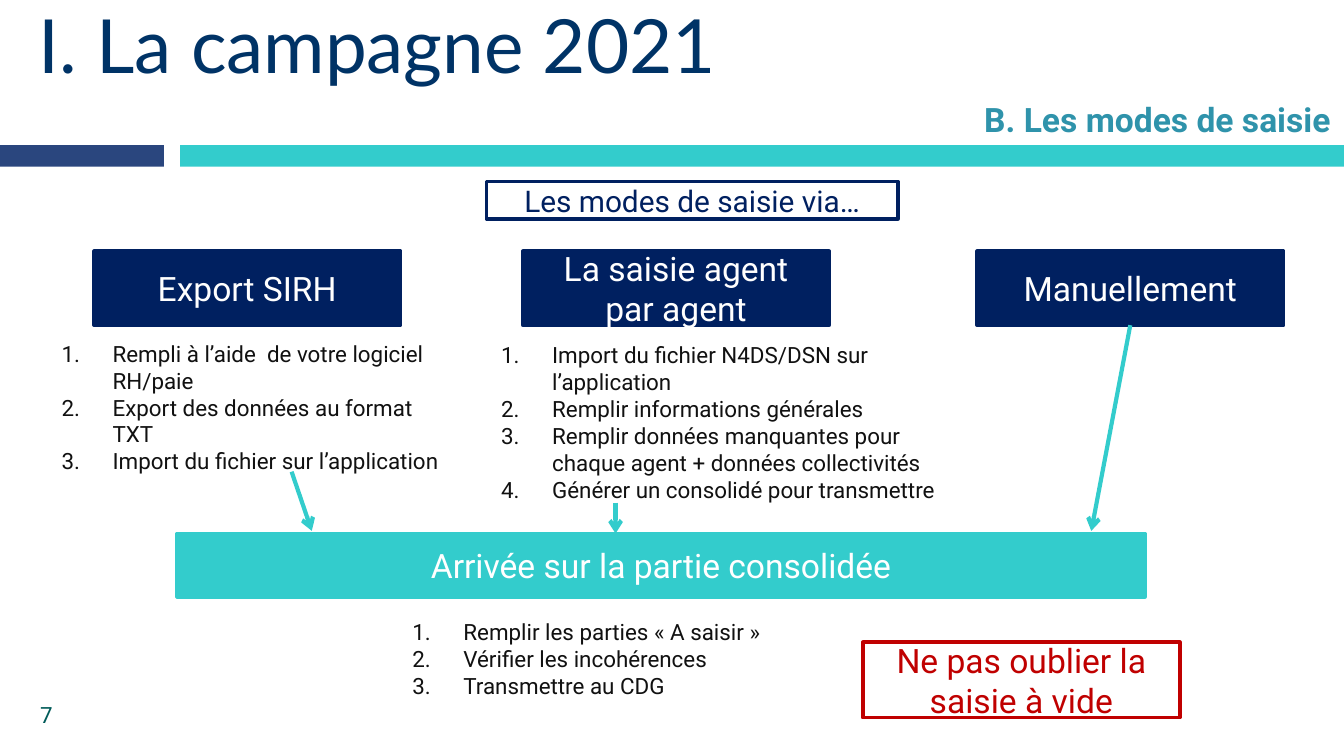
from dataclasses import dataclass
from typing import Optional

from lxml import etree
from pptx import Presentation
from pptx.dml.color import RGBColor
from pptx.enum.shapes import MSO_CONNECTOR, MSO_SHAPE
from pptx.enum.text import MSO_ANCHOR, MSO_AUTO_SIZE, PP_ALIGN
from pptx.oxml.ns import qn
from pptx.shapes.autoshape import Shape
from pptx.slide import Slide
from pptx.util import Inches, Pt

RECTANGLE = MSO_SHAPE.RECTANGLE
STRAIGHT = MSO_CONNECTOR.STRAIGHT
MIDDLE, TOP = MSO_ANCHOR.MIDDLE, MSO_ANCHOR.TOP
LEFT, CENTER, RIGHT = PP_ALIGN.LEFT, PP_ALIGN.CENTER, PP_ALIGN.RIGHT
NO_AUTOFIT, GROW = MSO_AUTO_SIZE.NONE, MSO_AUTO_SIZE.SHAPE_TO_FIT_TEXT
BOTTOM_SIDE = 2


@dataclass(frozen=True)
class Theme:
    title_font: str = "Lato"
    body_font: str = "Roboto"
    navy: str = "002060"
    turquoise: str = "33CCCC"
    bar_blue: str = "2A467E"
    title_blue: str = "003366"
    subtitle_blue: str = "2F93AB"
    page_green: str = "005B59"
    red: str = "C00000"
    ink: str = "111111"
    white: str = "FFFFFF"
    title_size: int = 40
    box_size: int = 18
    heading_size: int = 16
    list_size: int = 12
    outline: float = 2
    arrow: float = 2.25


THEME = Theme()


@dataclass(frozen=True)
class Area:
    left: float
    top: float
    width: float
    height: float

    def lengths(self) -> list[int]:
        return [Inches(value) for value in (self.left, self.top, self.width, self.height)]


@dataclass(frozen=True)
class Box:
    area: Area
    text: str
    fill: Optional[str]
    outline: str
    color: str = THEME.white
    size: int = THEME.box_size


@dataclass(frozen=True)
class NumberedList:
    area: Area
    steps: tuple[str, ...]


@dataclass(frozen=True)
class Arrow:
    start: tuple[float, float]
    end: tuple[float, float]
    source: Optional[Shape] = None


def rgb(color: str) -> RGBColor:
    return RGBColor.from_string(color)


def add_run(paragraph, text: str, size: int, color: str,
            font_name: str = THEME.body_font, bold: bool = False) -> None:
    run = paragraph.add_run()
    run.text = text
    run.font.name = font_name
    run.font.size = Pt(size)
    run.font.bold = bold
    run.font.color.rgb = rgb(color)


def add_bar(slide: Slide, area: Area, color: str) -> None:
    bar = slide.shapes.add_shape(RECTANGLE, *area.lengths())
    bar.shadow.inherit = False
    bar.fill.solid()
    bar.fill.fore_color.rgb = rgb(color)
    bar.line.fill.background()


def add_box(slide: Slide, box: Box) -> Shape:
    shape = slide.shapes.add_shape(RECTANGLE, *box.area.lengths())
    shape.shadow.inherit = False
    if box.fill:
        shape.fill.solid()
        shape.fill.fore_color.rgb = rgb(box.fill)
    else:
        shape.fill.background()
    shape.line.color.rgb = rgb(box.outline)
    shape.line.width = Pt(THEME.outline)
    frame = shape.text_frame
    frame.word_wrap = True
    frame.vertical_anchor = MIDDLE
    paragraph = frame.paragraphs[0]
    paragraph.alignment = CENTER
    add_run(paragraph, box.text, box.size, box.color)
    return shape


def add_text_frame(slide: Slide, area: Area, anchor: MSO_ANCHOR = TOP,
                   auto_size: MSO_AUTO_SIZE = GROW):
    frame = slide.shapes.add_textbox(*area.lengths()).text_frame
    frame.word_wrap = True
    frame.vertical_anchor = anchor
    frame.auto_size = auto_size
    return frame


def set_left_margin(paragraph, margin: float, indent: float = 0) -> None:
    properties = paragraph._p.get_or_add_pPr()
    properties.set("marL", str(Inches(margin)))
    properties.set("indent", str(Inches(indent)))


def add_numbered_list(slide: Slide, numbered_list: NumberedList) -> None:
    frame = add_text_frame(slide, numbered_list.area)
    for index, step in enumerate(numbered_list.steps):
        paragraph = frame.add_paragraph() if index else frame.paragraphs[0]
        set_left_margin(paragraph, 0.38, -0.38)
        properties = paragraph._p.get_or_add_pPr()
        etree.SubElement(properties, qn("a:buFont"), typeface="+mj-lt")
        etree.SubElement(properties, qn("a:buAutoNum"), type="arabicPeriod")
        add_run(paragraph, step, THEME.list_size, THEME.ink)


def add_arrow(slide: Slide, arrow: Arrow) -> None:
    points = [Inches(value) for value in arrow.start + arrow.end]
    connector = slide.shapes.add_connector(STRAIGHT, *points)
    if arrow.source is not None:
        connector.begin_connect(arrow.source, BOTTOM_SIDE)
    connector.line.color.rgb = rgb(THEME.turquoise)
    connector.line.width = Pt(THEME.arrow)
    etree.SubElement(connector.line._get_or_add_ln(), qn("a:tailEnd"), type="arrow")
    etree.SubElement(connector._element.spPr, qn("a:effectLst"))


def add_title(slide: Slide, area: Area, text: str) -> None:
    title = slide.shapes.title
    title.left, title.top, title.width, title.height = area.lengths()
    frame = title.text_frame
    frame.auto_size = NO_AUTOFIT
    frame.vertical_anchor = MIDDLE
    paragraph = frame.paragraphs[0]
    paragraph.alignment = LEFT
    set_left_margin(paragraph, 0.49)
    add_run(paragraph, text, THEME.title_size, THEME.title_blue, THEME.title_font)


def main() -> None:
    presentation = Presentation()
    presentation.slide_width = Inches(10)
    presentation.slide_height = presentation.slide_width * 9 // 16
    slide = presentation.slides.add_slide(presentation.slide_layouts[5])

    add_bar(slide, Area(1.34, 1.08, 8.66, 0.16), THEME.turquoise)
    add_bar(slide, Area(0, 1.08, 1.22, 0.16), THEME.bar_blue)
    add_title(slide, Area(-0.3, -0.1, 8.82, 0.85), "I. La campagne 2021")

    page_number = add_text_frame(slide, Area(0.2, 5.17, 2.33, 0.3), MIDDLE, NO_AUTOFIT)
    add_run(page_number.paragraphs[0], "7", THEME.list_size, THEME.page_green)
    subtitle = add_text_frame(slide, Area(4.96, 0.69, 5.04, 0.4)).paragraphs[0]
    subtitle.alignment = RIGHT
    add_run(subtitle, "B. Les modes de saisie", THEME.box_size, THEME.subtitle_blue, bold=True)

    add_box(slide, Box(Area(3.62, 1.35, 3.06, 0.28), "Les modes de saisie via…",
                       None, THEME.navy, THEME.navy, THEME.heading_size))
    modes = ((0.7, "Export SIRH"), (3.89, "La saisie agent par agent"), (7.27, "Manuellement"))
    mode_boxes = [add_box(slide, Box(Area(left, 1.87, 2.28, 0.55), text, THEME.navy, THEME.navy))
                  for left, text in modes]
    add_box(slide, Box(Area(1.32, 3.97, 7.2, 0.47), "Arrivée sur la partie consolidée",
                       THEME.turquoise, THEME.turquoise))

    for numbered_list in (
        NumberedList(Area(0.36, 2.48, 3.07, 1.11), (
            "Rempli à l’aide  de votre logiciel RH/paie",
            "Export des données au format TXT",
            "Import du fichier sur l’application")),
        NumberedList(Area(3.63, 2.49, 3.49, 1.31), (
            "Import du fichier N4DS/DSN sur l’application",
            "Remplir informations générales",
            "Remplir données manquantes pour chaque agent + données collectivités",
            "Générer un consolidé pour transmettre")),
        NumberedList(Area(2.97, 4.55, 2.93, 0.71), (
            "Remplir les parties « A saisir »",
            "Vérifier les incohérences",
            "Transmettre au CDG")),
    ):
        add_numbered_list(slide, numbered_list)

    for arrow in (Arrow((8.41, 2.42), (8.12, 3.95), mode_boxes[-1]),
                  Arrow((4.58, 3.74), (4.58, 3.97)),
                  Arrow((2.17, 3.51), (2.32, 3.95))):
        add_arrow(slide, arrow)

    add_box(slide, Box(Area(6.42, 4.78, 2.36, 0.56), "Ne pas oublier la saisie à vide",
                       THEME.white, THEME.red, THEME.red))
    presentation.save("out.pptx")


if __name__ == "__main__":
    main()
